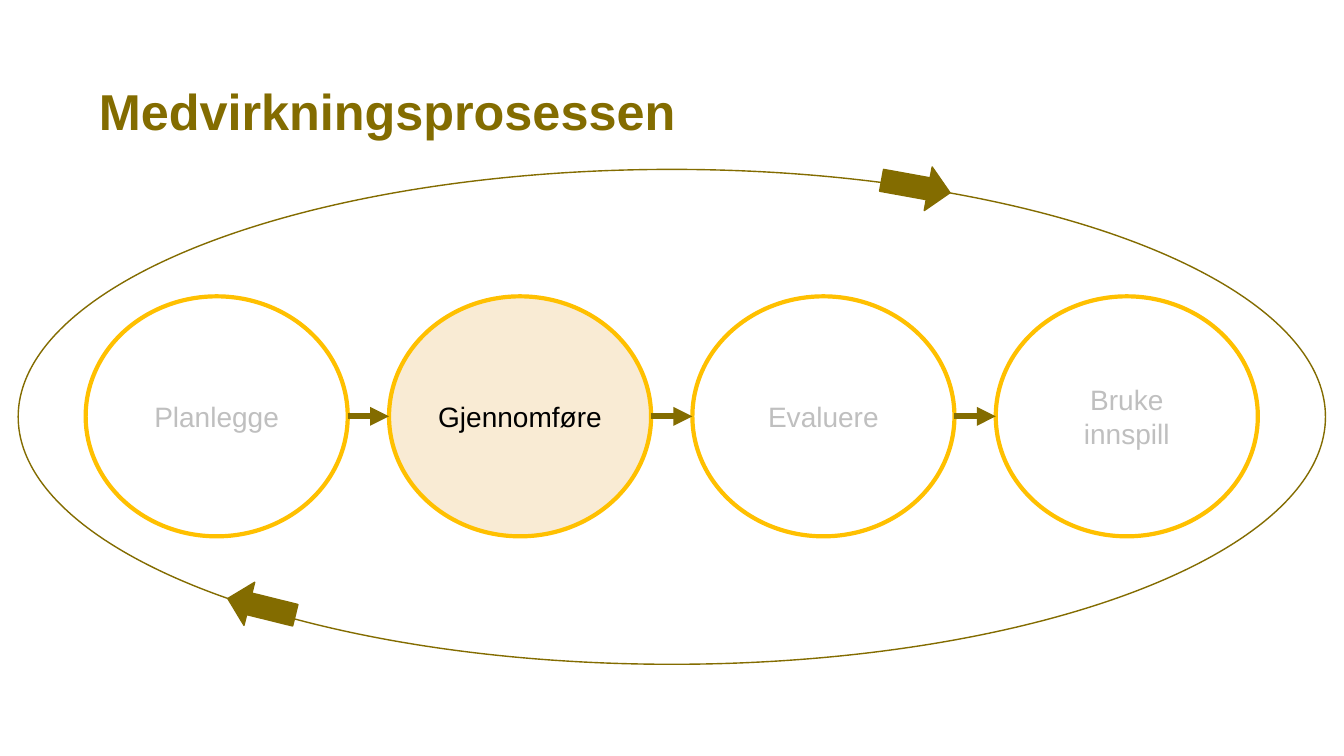
from lxml.etree import SubElement
from pptx import Presentation
from pptx.dml.color import RGBColor
from pptx.enum.shapes import MSO_CONNECTOR, MSO_SHAPE
from pptx.enum.text import MSO_ANCHOR, PP_ALIGN
from pptx.oxml.ns import qn
from pptx.util import Pt

OLIVE = RGBColor(0x83, 0x6C, 0x00)
GOLD = RGBColor(0xFF, 0xC0, 0x00)
CREAM = RGBColor(0xF9, 0xEB, 0xD4)
WHITE = RGBColor(0xFF, 0xFF, 0xFF)
GREY = RGBColor(0xBF, 0xBF, 0xBF)
BLACK = RGBColor(0x00, 0x00, 0x00)
FONT = "Arial"

TITLE = "Medvirkningsprosessen"
STEPS = ["Planlegge", "Gjennomføre", "Evaluere", "Bruke innspill"]
CURRENT_STEP = "Gjennomføre"
# Left, top and rotation of the arrows on the loop
LOOP_ARROWS = [(629.3, 117.4, 10.3), (162, 417.6, 193.9)]

STEP_LEFT, STEP_TOP = 61.2, 211.7
STEP_WIDTH, STEP_HEIGHT = 187.2, 171.4
STEP_PITCH = 216.7


def add_outlined_shape(slide, kind, box, fill, line_color, line_width):
    shape = slide.shapes.add_shape(kind, *map(Pt, box))
    shape.shadow.inherit = False
    if fill is None:
        shape.fill.background()
    else:
        shape.fill.solid()
        shape.fill.fore_color.rgb = fill
    shape.line.color.rgb = line_color
    shape.line.width = Pt(line_width)
    return shape


def format_text(shape, size, color, bold=False):
    shape.text_frame.vertical_anchor = MSO_ANCHOR.MIDDLE
    font = shape.text_frame.paragraphs[0].runs[0].font
    font.name, font.size, font.bold = FONT, Pt(size), bold
    font.color.rgb = color


def add_title(slide):
    title = slide.shapes.title
    title.left, title.top, title.width, title.height = map(Pt, (70.6, 22.3, 828, 118.1))
    frame = title.text_frame
    frame.text = TITLE
    frame.word_wrap = True
    frame.margin_left = frame.margin_right = frame.margin_top = frame.margin_bottom = 0
    frame.paragraphs[0].alignment = PP_ALIGN.LEFT
    frame.paragraphs[0].line_spacing = 0.9
    format_text(title, 36, OLIVE, bold=True)


def add_step(slide, index, label):
    current = label == CURRENT_STEP
    box = (STEP_LEFT + index * STEP_PITCH, STEP_TOP, STEP_WIDTH, STEP_HEIGHT)
    step = add_outlined_shape(slide, MSO_SHAPE.OVAL, box, CREAM if current else WHITE, GOLD, 3)
    step.text_frame.text = label
    step.text_frame.paragraphs[0].alignment = PP_ALIGN.CENTER
    format_text(step, 20, BLACK if current else GREY)


def add_step_arrow(slide, index):
    """Join the step at index to the one after it."""
    end = STEP_LEFT + (index + 1) * STEP_PITCH
    start = end - STEP_PITCH + STEP_WIDTH
    middle = STEP_TOP + STEP_HEIGHT / 2
    arrow = slide.shapes.add_connector(
        MSO_CONNECTOR.STRAIGHT, Pt(start), Pt(middle), Pt(end), Pt(middle))
    arrow.line.color.rgb = OLIVE
    arrow.line.width = Pt(4.5)
    SubElement(arrow.line._get_or_add_ln(), qn("a:tailEnd"), type="triangle")
    SubElement(arrow._element.spPr, qn("a:effectLst"))


def main():
    presentation = Presentation()
    presentation.slide_width, presentation.slide_height = Pt(960), Pt(540)
    slide = presentation.slides.add_slide(presentation.slide_layouts[5])

    add_title(slide)
    for index, label in enumerate(STEPS):
        add_step(slide, index, label)
    for index in range(len(STEPS) - 1):
        add_step_arrow(slide, index)

    add_outlined_shape(slide, MSO_SHAPE.OVAL, (13, 121, 933.8, 353.5), None, OLIVE, 1)
    for left, top, rotation in LOOP_ARROWS:
        arrow = add_outlined_shape(
            slide, MSO_SHAPE.RIGHT_ARROW, (left, top, 49.7, 31.7), OLIVE, OLIVE, 1)
        arrow.rotation = rotation

    presentation.save("out.pptx")


if __name__ == "__main__":
    main()
